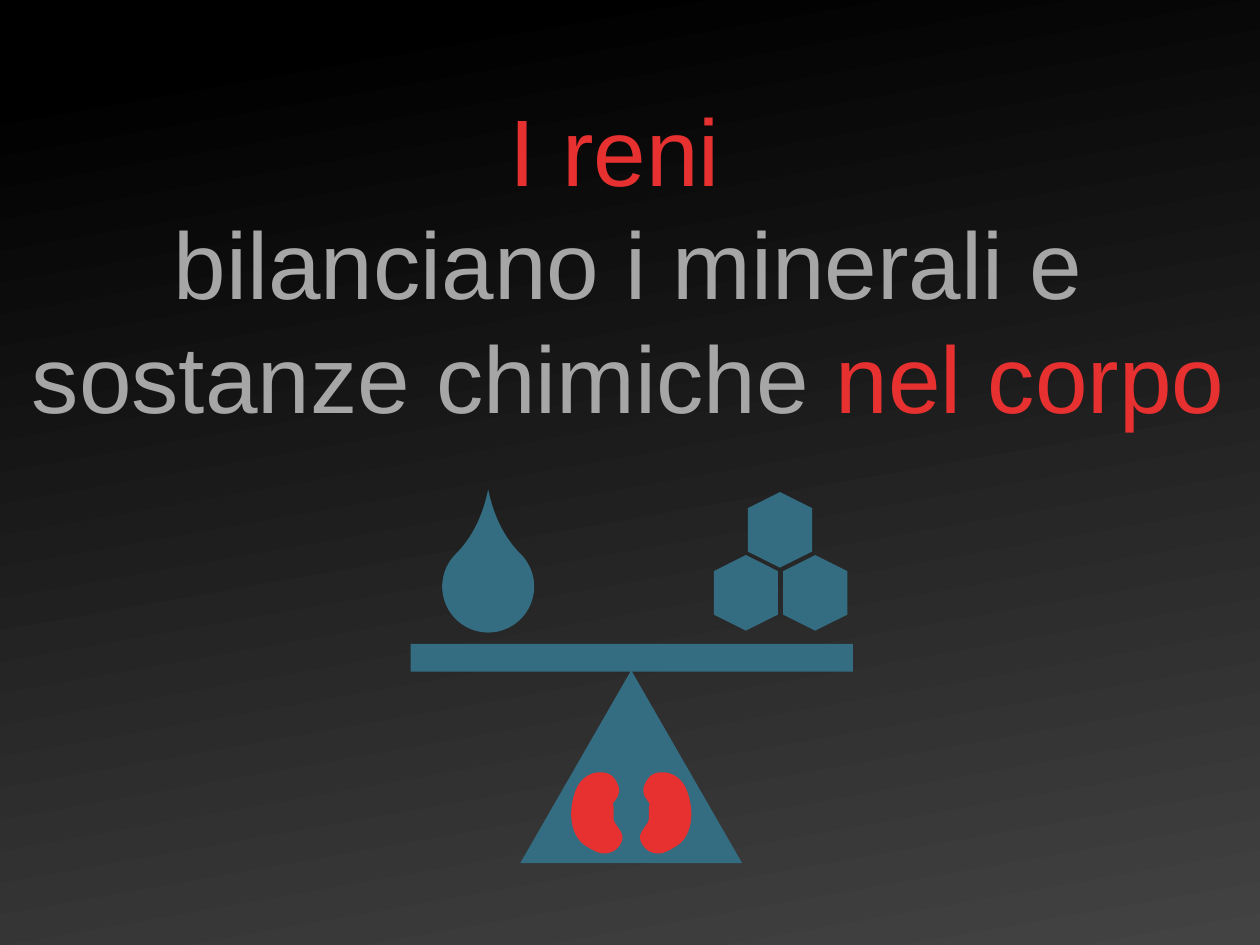
import pptx
import pptx.dml.color
import pptx.enum.shapes
import pptx.enum.text
import pptx.oxml
import pptx.oxml.ns
import pptx.util
from dataclasses import dataclass

Inches = pptx.util.Inches
SHAPE = pptx.enum.shapes.MSO_SHAPE
qn = pptx.oxml.ns.qn
rgb = pptx.dml.color.RGBColor.from_string


@dataclass(frozen=True)
class Theme:
    night: str = "000000"
    dusk: str = "434343"
    red: str = "E63130"
    grey: str = "A6A6A6"
    blue: str = "346C81"
    font: str = "Arial"
    title_size: int = 54


theme = Theme()


def paint(shape, color):
    """Give a shape a flat fill with neither outline nor shadow."""
    shape.shadow.inherit = False
    shape.fill.solid()
    shape.fill.fore_color.rgb = rgb(color)
    shape.line.fill.background()


def add_outline(shapes, points, color, curved=False):
    """Draw a closed outline in inches; if curved, each three points after the first are a Bézier piece."""
    corners = [(Inches(x), Inches(y)) for x, y in points]
    builder = shapes.build_freeform(*corners[0])
    builder.add_line_segments(corners[1:], close=True)
    outline = builder.convert_to_shape()
    paint(outline, color)
    if curved:
        segments = list(outline.element.iter(qn("a:lnTo")))
        for first in range(0, len(points) - 1, 3):
            piece = segments[first:first + 3]
            curve = pptx.oxml.parse_xml(
                '<a:cubicBezTo xmlns:a="http://schemas.openxmlformats.org/drawingml/2006/main"/>')
            piece[0].addprevious(curve)
            for segment in piece:
                curve.append(segment[0])
                segment.getparent().remove(segment)


deck = pptx.Presentation()
deck.slide_width, deck.slide_height = Inches(10), Inches(7.5)
slide = deck.slides.add_slide(deck.slide_layouts[6])
shapes = slide.shapes

# Background
backdrop = slide.background.fill
backdrop.gradient()
backdrop.gradient_angle = 280
for stop, position, color in zip(backdrop.gradient_stops, (0.08, 1), (theme.night, theme.dusk)):
    stop.position = position
    stop.color.rgb = rgb(color)

# Message
message = shapes.add_textbox(Inches(0.12), Inches(0.68), Inches(9.73), Inches(2.83)).text_frame
message.word_wrap = True
message.auto_size = pptx.enum.text.MSO_AUTO_SIZE.SHAPE_TO_FIT_TEXT
sentence = message.paragraphs[0]
sentence.alignment = pptx.enum.text.PP_ALIGN.CENTER
phrases = [
    ("I reni ", theme.red),
    ("bilanciano i minerali e sostanze chimiche ", theme.grey),
    ("nel corpo", theme.red),
]
for index, (words, color) in enumerate(phrases):
    if index == 1:
        sentence.add_line_break()
    phrase = sentence.add_run()
    phrase.text = words
    for attribute, value in {"name": theme.font, "size": pptx.util.Pt(theme.title_size)}.items():
        setattr(phrase.font, attribute, value)
    phrase.font.color.rgb = rgb(color)

# Scale: pivot and beam
axis = 5.01
add_outline(shapes, [(axis, 5.32), (axis - 0.88, 6.85), (axis + 0.88, 6.85)], theme.blue)
beam = shapes.add_shape(SHAPE.RECTANGLE, Inches(3.26), Inches(5.11), Inches(3.51), Inches(0.22))
paint(beam, theme.blue)

# Kidneys: the left one, mirrored about the axis for the right one
kidney = [
    (4.87, 6.45),
    (4.87, 6.43), (4.87, 6.41), (4.87, 6.4),
    (4.86, 6.39), (4.86, 6.38), (4.87, 6.37),
    (4.88, 6.35), (4.89, 6.35), (4.89, 6.34),
    (4.9, 6.33), (4.91, 6.31), (4.91, 6.3),
    (4.92, 6.28), (4.91, 6.23), (4.9, 6.22),
    (4.87, 6.15), (4.82, 6.13), (4.78, 6.13),
    (4.68, 6.12), (4.6, 6.19), (4.57, 6.27),
    (4.5, 6.45), (4.53, 6.65), (4.66, 6.72),
    (4.74, 6.77), (4.79, 6.79), (4.86, 6.76),
    (4.89, 6.75), (4.95, 6.69), (4.94, 6.63),
    (4.93, 6.6), (4.92, 6.59), (4.9, 6.56),
    (4.89, 6.55), (4.89, 6.54), (4.88, 6.53),
    (4.87, 6.52), (4.87, 6.51), (4.87, 6.45),
]
add_outline(shapes, kidney, theme.red, curved=True)
add_outline(shapes, [(2 * axis - x, y) for x, y in kidney], theme.red, curved=True)

# Water on the left pan
drop = shapes.add_shape(SHAPE.TEAR, Inches(3.51), Inches(4.29), Inches(0.73), Inches(0.73))
drop.adjustments[0] = 1.493
drop.rotation = 315
paint(drop, theme.blue)

# Minerals on the right pan
for left, top in [(5.62, 4.45), (5.89, 3.95), (6.17, 4.45)]:
    mineral = shapes.add_shape(SHAPE.HEXAGON, Inches(left), Inches(top), Inches(0.6), Inches(0.51))
    mineral.rotation = 270
    paint(mineral, theme.blue)

deck.save("out.pptx")
